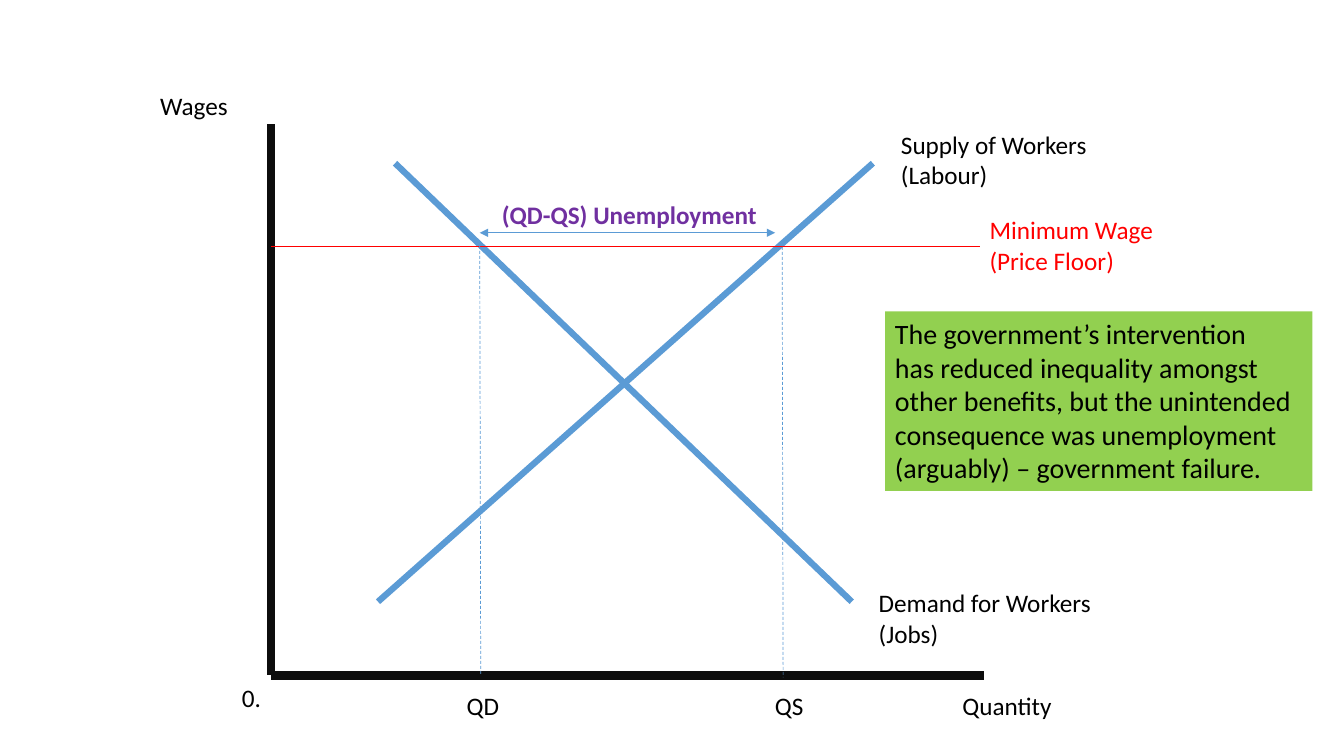
from dataclasses import dataclass

from lxml import etree
from pptx import Presentation
from pptx.dml.color import RGBColor
from pptx.enum import dml, shapes, text
from pptx.oxml import ns
from pptx.util import Pt


@dataclass(frozen=True)
class Theme:
    font: str = "Calibri"
    label_size: float = 18
    note_size: float = 20
    axis_width: float = 6
    curve_width: float = 4.5
    guide_width: float = 0.5
    black: str = "000000"
    axis: str = "0D0D0D"
    blue: str = "5B9BD5"
    red: str = "FF0000"
    purple: str = "7030A0"
    green: str = "92D050"


THEME = Theme()


@dataclass(frozen=True)
class Line:
    start: tuple[float, float]
    end: tuple[float, float]
    color: str = THEME.blue
    width: float = THEME.guide_width
    dashed: bool = False
    arrows: bool = False


@dataclass(frozen=True)
class Label:
    words: str
    left: float
    top: float
    width: float
    height: float = 28.8
    color: str = THEME.black
    size: float = THEME.label_size
    bold: bool = False
    wrap: bool = False
    fill: str | None = None


# Shared diagram positions, in points
ORIGIN_X, ORIGIN_Y = 193.7, 482.4
AXIS_TOP, AXIS_RIGHT = 88.6, 702.7
CURVE_TOP, CURVE_BOTTOM = 116.6, 429.8
WAGE_Y, WAGE_RIGHT = 175.7, 699.8
DEMANDED_X, GAP_Y = 342.7, 166.3
AXIS_LABEL_TOP = 489.6
TWO_LINES = 51.1

AXES = [
    Line((ORIGIN_X, AXIS_TOP), (ORIGIN_X, ORIGIN_Y), THEME.axis, THEME.axis_width),
    Line((ORIGIN_X, ORIGIN_Y), (AXIS_RIGHT, ORIGIN_Y), THEME.axis, THEME.axis_width),
]
CURVES = [
    Line((282.2, CURVE_TOP), (608.4, CURVE_BOTTOM), width=THEME.curve_width),
    Line((270, CURVE_BOTTOM), (623.5, CURVE_TOP), width=THEME.curve_width),
]
GUIDES = [
    Line((ORIGIN_X, WAGE_Y), (WAGE_RIGHT, WAGE_Y), THEME.red),
    Line((DEMANDED_X, WAGE_Y), (343.4, ORIGIN_Y), dashed=True),
    Line((558.7, 176.4), (559.4, 483.8), dashed=True),
    Line((DEMANDED_X, GAP_Y), (553.7, GAP_Y), arrows=True),
]
LABELS = [
    Label("Wages", 107.3, 61.2, 63.4),
    Label("Quantity", 680.4, AXIS_LABEL_TOP, 79.2),
    Label("Supply of Workers\n(Labour)", 636.5, AXIS_TOP, 148.3, TWO_LINES),
    Label("Demand for Workers\n(Jobs)", 620.6, 416.2, 167.8, TWO_LINES),
    Label("Minimum Wage\n(Price Floor)", WAGE_RIGHT, 149.8, 132.5, TWO_LINES, THEME.red),
    Label("QD", 326.2, AXIS_LABEL_TOP, 61.9, wrap=True),
    Label("QS", 546.5, AXIS_LABEL_TOP, 61.9, wrap=True),
    Label("0.", 165.6, 483.8, 28.1),
    Label(
        "The government’s intervention\nhas reduced inequality amongst\n"
        "other benefits, but the unintended\nconsequence was unemployment\n"
        "(arguably) – government failure.",
        632.2, 222.5, 305.3, 128.2, size=THEME.note_size, wrap=True, fill=THEME.green,
    ),
    Label("(QD-QS) Unemployment", 351.4, 139, 198, color=THEME.purple, bold=True),
]


def draw_line(slide, line: Line) -> None:
    connector = slide.shapes.add_connector(
        shapes.MSO_CONNECTOR.STRAIGHT, *map(Pt, line.start + line.end)
    )
    connector.line.color.rgb = RGBColor.from_string(line.color)
    connector.line.width = Pt(line.width)
    if line.dashed:
        connector.line.dash_style = dml.MSO_LINE.DASH
    if line.arrows:
        outline = connector.line._get_or_add_ln()
        for end in ("a:headEnd", "a:tailEnd"):
            etree.SubElement(outline, ns.qn(end), type="triangle")
    etree.SubElement(connector._element.spPr, ns.qn("a:effectLst"))


def draw_label(slide, label: Label) -> None:
    frame = tuple(map(Pt, (label.left, label.top, label.width, label.height)))
    if label.fill:
        shape = slide.shapes.add_shape(shapes.MSO_SHAPE.RECTANGLE, *frame)
        shape.shadow.inherit = False
        shape.fill.solid()
        shape.fill.fore_color.rgb = RGBColor.from_string(label.fill)
        shape.line.fill.background()
    else:
        shape = slide.shapes.add_textbox(*frame)

    frame_format = {
        "word_wrap": label.wrap,
        "auto_size": text.MSO_AUTO_SIZE.SHAPE_TO_FIT_TEXT,
        "vertical_anchor": text.MSO_ANCHOR.TOP,
    }
    for name, value in frame_format.items():
        setattr(shape.text_frame, name, value)

    # Line breaks stay inside one paragraph
    paragraph = shape.text_frame.paragraphs[0]
    paragraph.text = label.words
    paragraph.alignment = text.PP_ALIGN.LEFT
    font_format = {"name": THEME.font, "size": Pt(label.size), "bold": label.bold}
    for run in paragraph.runs:
        for name, value in font_format.items():
            setattr(run.font, name, value)
        run.font.color.rgb = RGBColor.from_string(label.color)


def main() -> None:
    presentation = Presentation()
    presentation.slide_width, presentation.slide_height = Pt(960), Pt(540)
    slide = presentation.slides.add_slide(presentation.slide_layouts[6])

    # Axes, curves and guides, then the wording
    for line in AXES + CURVES + GUIDES:
        draw_line(slide, line)
    for label in LABELS:
        draw_label(slide, label)

    presentation.save("out.pptx")


if __name__ == "__main__":
    main()
